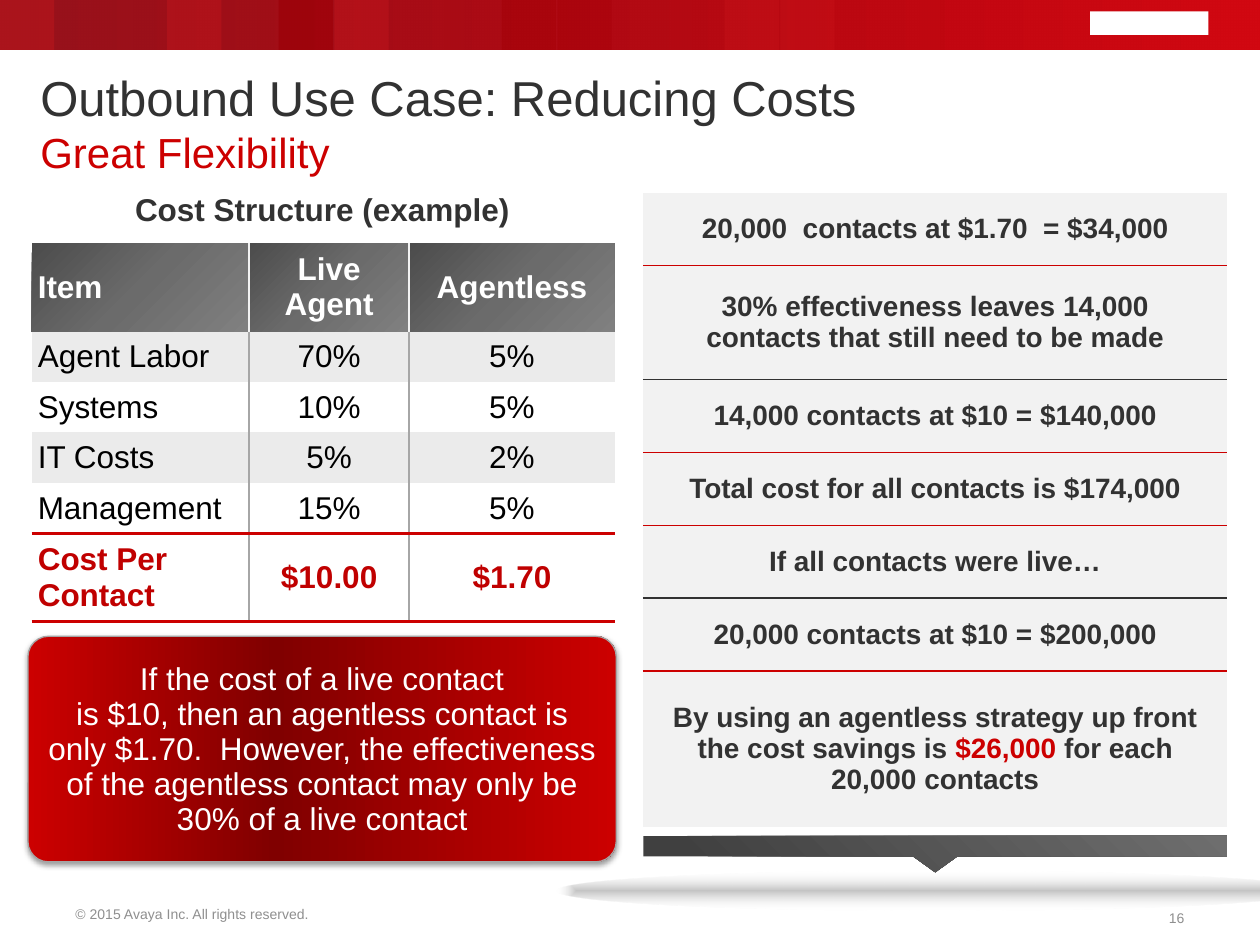
"""Builds a slide comparing live and agentless contact costs."""
from lxml import etree
from pptx import Presentation
from pptx.dml.color import RGBColor
from pptx.enum import shapes, text
from pptx.oxml.ns import qn
from pptx.util import Pt

RED, DARK, GREY, WHITE = "CC0000", "323232", "A6A6A6", "FFFFFF"
LEFT, CENTER, RIGHT = text.PP_ALIGN.LEFT, text.PP_ALIGN.CENTER, text.PP_ALIGN.RIGHT
SHAPE = shapes.MSO_SHAPE
NO_STYLE = "{2D5ABB26-0587-4C30-8999-92F81FD0307C}"

COSTS = [
    ("Item", "Live Agent", "Agentless"),
    ("Agent Labor", "70%", "5%"),
    ("Systems", "10%", "5%"),
    ("IT Costs", "5%", "2%"),
    ("Management", "15%", "5%"),
    ("Cost Per Contact", "$10.00", "$1.70"),
]
STEPS = [
    ([("20,000  contacts at $1.70  = $34,000", DARK)], 41.6, RED),
    ([("30% effectiveness leaves 14,000 contacts that still need to be made", DARK)], 65.2, DARK),
    ([("14,000 contacts at $10 = $140,000", DARK)], 41.6, RED),
    ([("Total cost for all contacts is $174,000", DARK)], 41.6, RED),
    ([("If all contacts were live…", DARK)], 41.6, DARK),
    ([("20,000 contacts at $10 = $200,000", DARK)], 41.6, RED),
    ([("By using an agentless strategy up front the cost savings is ", DARK),
      ("$26,000 ", RED), ("for each 20,000 contacts", DARK)], 89.2, None),
]


def rgb(value):
    """Turn a hex string into a colour."""
    return RGBColor.from_string(value)


def child(parent, tag, **attrs):
    """Append a DrawingML element."""
    el = etree.SubElement(parent, qn("a:" + tag))
    for name, value in attrs.items():
        el.set(name, str(value))
    return el


def color(parent, value, alpha=100):
    """Append a colour with an opacity in percent."""
    el = child(parent, "srgbClr", val=value)
    if alpha < 100:
        child(el, "alpha", val=alpha * 1000)


def gradient(fill, props, stops, angle=None):
    """Fill with (position, colour, opacity) stops, radially without an angle."""
    fill.gradient()
    grad = props.find(qn("a:gradFill"))
    for el in list(grad):
        grad.remove(el)
    stop_list = child(grad, "gsLst")
    for pos, value, alpha in stops:
        color(child(stop_list, "gs", pos=pos * 1000), value, alpha)
    if angle is None:
        child(child(grad, "path", path="shape"), "fillToRect", l=50000, t=50000, r=50000, b=50000)
    else:
        child(grad, "lin", ang=angle * 60000, scaled=0)


def write(tf, parts, size, bold=False, align=LEFT, spacing=None):
    """Write one paragraph from (text, colour) parts."""
    p = tf.paragraphs[0]
    p.alignment = align
    p.line_spacing = spacing
    for words, value in parts:
        for i, line in enumerate(words.split("\n")):
            if i:
                p.add_line_break()
            r = p.add_run()
            r.text = line
            r.font.name, r.font.size, r.font.bold = "Arial", Pt(size), bold
            r.font.color.rgb = rgb(value)


def label(s, box, parts, size, wrap=False, anchor=text.MSO_ANCHOR.MIDDLE, **style):
    """Add a text box."""
    tf = s.shapes.add_textbox(*map(Pt, box)).text_frame
    tf.word_wrap = wrap
    tf.vertical_anchor = anchor
    write(tf, parts, size, **style)


def shape(s, kind, box, fill=None, stops=None, angle=None):
    """Add a preset shape without line or shadow."""
    sp = s.shapes.add_shape(kind, *map(Pt, box))
    sp.shadow.inherit = False
    sp.line.fill.background()
    if stops:
        gradient(sp.fill, sp._element.spPr, stops, angle)
    else:
        sp.fill.solid()
        sp.fill.fore_color.rgb = rgb(fill)
    return sp


def table(s, box, widths, heights):
    """Add an unstyled table."""
    frame = s.shapes.add_table(len(heights), len(widths), *map(Pt, box))
    tb = frame.table
    tb._tbl.tblPr.find(qn("a:tableStyleId")).text = NO_STYLE
    tb.first_row = tb.horz_banding = False
    for col, width in zip(tb.columns, widths):
        col.width = Pt(width)
    for row, height in zip(tb.rows, heights):
        row.height = Pt(height)
    return tb


def format_cell(cell, insets, borders, fill=None):
    """Set margins, borders as side: (colour, width), and fill."""
    cell.vertical_anchor = text.MSO_ANCHOR.MIDDLE
    cell.margin_left = cell.margin_right = Pt(insets[0])
    cell.margin_top = cell.margin_bottom = Pt(insets[1])
    for side in "LRTB":
        if side in borders:
            value, width = borders[side]
            ln = child(cell._tc.get_or_add_tcPr(), "ln" + side, w=Pt(width))
            color(child(ln, "solidFill"), value)
    if fill:
        cell.fill.solid()
        cell.fill.fore_color.rgb = rgb(fill)
    else:
        cell.fill.background()


def banner(s):
    """Draw the red band with its blocks and a plain mark."""
    band = [(0, "91050F", 76), (100, "D10811", 100)]
    blocks = [(14, "FF4747"), (13, "FF4747"), (10, "990000"), (9, "990000"),
              (6, "FF4747"), (5, "990000"), (3, "FF4747"), (0, "FF4747")]
    shape(s, SHAPE.RECTANGLE, (0, -0.5, 720, 29), stops=band, angle=0)
    for slot, value in blocks:
        shape(s, SHAPE.RECTANGLE, (slot * 31.85, -0.5, 31, 29), value)
    shape(s, SHAPE.RECTANGLE, (0, -0.5, 720, 29), stops=band, angle=0)
    shape(s, SHAPE.RECTANGLE, (623, 6.5, 67.5, 13.5), WHITE)


def cost_table(s):
    """Draw the cost structure table."""
    tb = table(s, (18, 139, 333.3, 205), (124.4, 91.4, 117.5), (48, 27.3, 27.3, 27.3, 27.3, 47.5))
    last = len(COSTS) - 1
    for i, row in enumerate(COSTS):
        value = WHITE if i == 0 else "C00000" if i == last else "000000"
        for j, words in enumerate(row):
            cell = tb.cell(i, j)
            rule = ("F2F2F2" if i == 0 else GREY, 1)
            borders = {side: rule for side, shown in (("L", j > 0), ("R", j < 2)) if shown}
            if i == last:
                borders["T"] = (RED, 2.25)
            if i >= last - 1:
                borders["B"] = (RED, 2.25)
            format_cell(cell, (3.6, 3.6), borders, "EBEBEB" if i in (1, 3) else None)
            if i == 0:
                gradient(cell.fill, cell._tc.tcPr,
                         [(0, "4C4C4C", 100), (50, "6B6B6B", 100), (100, "808080", 100)], 45)
            write(cell.text_frame, [(words, value)], 18, i in (0, last), CENTER if j else LEFT)


def step_table(s):
    """Draw the savings calculation."""
    heights = [height for _, height, _ in STEPS]
    tb = table(s, (367.4, 110.2, 334, sum(heights)), [334], heights)
    above = None
    for i, (parts, _, below) in enumerate(STEPS):
        borders = {side: (value, 1) for side, value in (("T", above), ("B", below)) if value}
        format_cell(tb.cell(i, 0), (14.4, 7.2), borders, "F2F2F2")
        write(tb.cell(i, 0).text_frame, parts, 16, True, CENTER)
        above = below


def pointer(s):
    """Draw the dark bar pointing down and the soft ellipse below it."""
    sp = shape(s, SHAPE.RIGHT_ARROW_CALLOUT, (524, 321.3, 20.9, 333.4),
               stops=[(9, "404040", 100), (100, "6E6E6E", 100)], angle=135)
    for i, value in enumerate((0.768, 0.61, 0.437, 0.75)):
        sp.adjustments[i] = value
    sp.rotation = 90
    sp._element.spPr.xfrm.set("flipV", "1")
    shape(s, SHAPE.OVAL, (318.2, 497.5, 432, 23), stops=[(0, "000000", 23), (100, WHITE, 0)])


def message(s):
    """Draw the rounded red message."""
    sp = shape(s, SHAPE.ROUNDED_RECTANGLE, (16, 363.6, 336.2, 128.9),
               stops=[(0, RED, 100), (42, "800000", 100), (100, RED, 100)], angle=0)
    sp.adjustments[0] = 0.091
    sp.line.color.rgb = rgb("A5A5A5")
    sp.line.width = Pt(0.75)
    effects = sp._element.spPr.find(qn("a:effectLst"))
    color(child(effects, "outerShdw", blurRad=Pt(3.1), dist=Pt(1.6), dir=5400000), "000000", 38)
    sp.text_frame.word_wrap = True
    sp.text_frame.vertical_anchor = text.MSO_ANCHOR.MIDDLE
    words = ("If the cost of a live contact\nis $10, then an agentless contact is only $1.70.  "
             "However, the effectiveness of the agentless contact may only be 30% of a live contact")
    write(sp.text_frame, [(words, WHITE)], 18, align=CENTER, spacing=Pt(20))


def main():
    """Build and save the slide."""
    prs = Presentation()
    prs.slide_width, prs.slide_height = Pt(720), Pt(540)
    s = prs.slides.add_slide(prs.slide_layouts[6])
    banner(s)
    label(s, (36, 515, 150.5, 15.8), [("© 2015 Avaya Inc. All rights reserved.", "8F8F8F")], 8, spacing=0.9)
    label(s, (659.5, 517, 24.5, 15.8), [("16", "8F8F8F")], 8, align=RIGHT, spacing=0.9)
    label(s, (16, 36.7, 648, 66.2),
          [("Outbound Use Case: Reducing Costs\n", DARK)], 28, wrap=True)
    title = s.shapes[-1].text_frame.paragraphs[0]
    title.runs[-1].text = "Great Flexibility"
    title.runs[-1].font.size = Pt(24)
    title.runs[-1].font.color.rgb = rgb(RED)
    step_table(s)
    pointer(s)
    cost_table(s)
    message(s)
    label(s, (69, 105, 230.4, 29), [("Cost Structure (example)", DARK)], 18,
          anchor=text.MSO_ANCHOR.TOP, bold=True, align=CENTER)
    prs.save("out.pptx")


if __name__ == "__main__":
    main()
